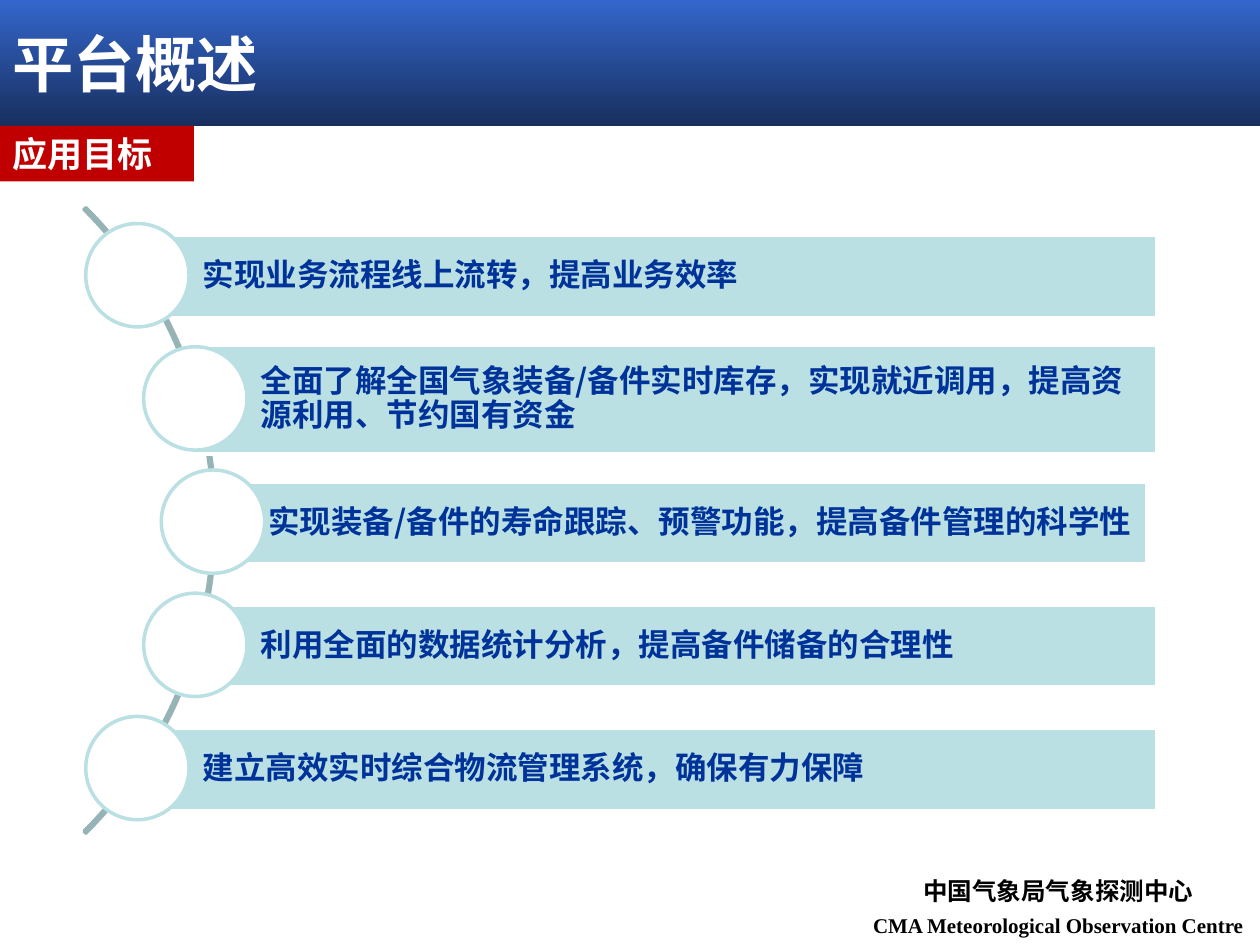
import math
from dataclasses import dataclass

import pptx
import pptx.dml.color
import pptx.enum.shapes
import pptx.enum.text
import pptx.oxml
import pptx.oxml.ns
import pptx.util

COLUMNS = 100
ROWS = 75
CELL = pptx.util.Inches(0.1)


@dataclass(frozen=True)
class Theme:
    chinese: str = "Noto Sans CJK SC"
    label: str = "Arial"
    english: str = "Times New Roman"
    white: str = "FFFFFF"
    black: str = "000000"
    blue: str = "3366CC"
    navy: str = "182F5E"
    red: str = "C00000"
    pale: str = "BBE0E3"
    arc: str = "96B3B6"
    goal: str = "003399"
    title_size: float = 35
    label_size: float = 20
    goal_size: float = 18
    footer_size: float = 14
    footer_english_size: float = 12
    line_width: float = 2


@dataclass(frozen=True)
class Box:
    column: float
    row: float
    columns: float
    rows: float

    def lengths(self) -> tuple[int, ...]:
        return tuple(round(value * CELL) for value in (self.column, self.row, self.columns, self.rows))


@dataclass(frozen=True)
class Goal:
    text: str
    rows: float = 6.5
    shift: float = 0


THEME = Theme()
GOALS = (
    Goal("实现业务流程线上流转，提高业务效率"),
    Goal("全面了解全国气象装备/备件实时库存，实现就近调用，提高资源利用、节约国有资金", rows=8.6),
    Goal("实现装备/备件的寿命跟踪、预警功能，提高备件管理的科学性", shift=-0.8),
    Goal("利用全面的数据统计分析，提高备件储备的合理性"),
    Goal("建立高效实时综合物流管理系统，确保有力保障"),
)
ARC_CENTRE_COLUMN = -18
ARC_CENTRE_ROW = 41.3
ARC_RADIUS = 35.1
ORBIT_RADIUS = 34.9
GOAL_PITCH = 9.78
CIRCLE = 8.2
BAR_RIGHT = 91.8


def colour(value: str) -> pptx.dml.color.RGBColor:
    return pptx.dml.color.RGBColor.from_string(value)


def add_run(paragraph, text: str, size: float, face: str, ink: str) -> None:
    run = paragraph.add_run()
    run.text = text
    run.font.size = pptx.util.Pt(size)
    run.font.bold = True
    run.font.color.rgb = colour(ink)
    run.font.name = face
    east_asian = pptx.oxml.parse_xml(f'<a:ea {pptx.oxml.ns.nsdecls("a")} typeface="{face}"/>')
    run.font._element.append(east_asian)


def add_figure(slide, kind, box: Box, fill: str | None = None, line: str | None = None):
    shape = slide.shapes.add_shape(kind, *box.lengths())
    shape.shadow.inherit = False
    if fill:
        shape.fill.solid()
        shape.fill.fore_color.rgb = colour(fill)
    else:
        shape.fill.background()
    if line:
        shape.line.color.rgb = colour(line)
        shape.line.width = pptx.util.Pt(THEME.line_width)
    else:
        shape.line.fill.background()
    return shape


def write_left(shape, text: str, size: float, face: str, ink: str):
    frame = shape.text_frame
    frame.word_wrap = True
    frame.vertical_anchor = pptx.enum.text.MSO_ANCHOR.MIDDLE
    paragraph = frame.paragraphs[0]
    paragraph.alignment = pptx.enum.text.PP_ALIGN.LEFT
    add_run(paragraph, text, size, face, ink)
    return paragraph


def format_title(slide) -> None:
    title = slide.shapes.title
    title.left, title.top, title.width, title.height = Box(0, 0, COLUMNS, 10).lengths()
    title.fill.gradient()
    title.fill.gradient_angle = 270
    for stop, value in zip(title.fill.gradient_stops, (THEME.blue, THEME.navy)):
        stop.color.rgb = colour(value)
        stop.position = 0 if value == THEME.blue else 1
    write_left(title, "平台概述", THEME.title_size, THEME.chinese, THEME.white)


def add_label(slide) -> None:
    label = add_figure(slide, pptx.enum.shapes.MSO_SHAPE.RECTANGLE, Box(0, 10, 15.4, 4.4), THEME.red)
    write_left(label, "应用目标", THEME.label_size, THEME.label, THEME.white)


def add_arc(slide) -> None:
    box = Box(ARC_CENTRE_COLUMN - ARC_RADIUS, ARC_CENTRE_ROW - ARC_RADIUS, 2 * ARC_RADIUS, 2 * ARC_RADIUS)
    arc = add_figure(slide, pptx.enum.shapes.MSO_SHAPE.BLOCK_ARC, box, line=THEME.arc)
    for index, value in enumerate((189, 27, 0.003)):
        arc.adjustments[index] = value


def add_goal(slide, goal: Goal, position: int) -> None:
    offset = (position - (len(GOALS) - 1) / 2) * GOAL_PITCH
    column = ARC_CENTRE_COLUMN + math.sqrt(ORBIT_RADIUS ** 2 - offset ** 2)
    row = ARC_CENTRE_ROW + offset
    left = column + goal.shift
    bar_box = Box(left, row + 0.2 - goal.rows / 2, BAR_RIGHT + goal.shift - left, goal.rows)
    bar = add_figure(slide, pptx.enum.shapes.MSO_SHAPE.RECTANGLE, bar_box, THEME.pale, THEME.white)
    frame = bar.text_frame
    frame.margin_left = round(5.2 * CELL)
    frame.margin_right = frame.margin_top = frame.margin_bottom = round(0.5 * CELL)
    paragraph = write_left(bar, goal.text, THEME.goal_size, THEME.chinese, THEME.goal)
    paragraph.line_spacing = 0.9
    circle_box = Box(column - CIRCLE / 2, row + 0.1 - CIRCLE / 2, CIRCLE, CIRCLE)
    add_figure(slide, pptx.enum.shapes.MSO_SHAPE.OVAL, circle_box, THEME.white, THEME.pale)


def add_footer(slide) -> None:
    footer = slide.shapes.add_textbox(*Box(68, 68.9, 32, 5.8).lengths())
    frame = footer.text_frame
    frame.word_wrap = True
    lines = (
        ("中国气象局气象探测中心", THEME.footer_size, THEME.chinese),
        ("CMA Meteorological Observation Centre", THEME.footer_english_size, THEME.english),
    )
    for index, (text, size, face) in enumerate(lines):
        paragraph = frame.add_paragraph() if index else frame.paragraphs[0]
        paragraph.alignment = pptx.enum.text.PP_ALIGN.CENTER
        paragraph.line_spacing = pptx.util.Pt(18)
        add_run(paragraph, text, size, face, THEME.black)


def main() -> None:
    presentation = pptx.Presentation()
    presentation.slide_width = COLUMNS * CELL
    presentation.slide_height = ROWS * CELL
    slide = presentation.slides.add_slide(presentation.slide_layouts[5])
    format_title(slide)
    add_footer(slide)
    add_label(slide)
    add_arc(slide)
    for position, goal in enumerate(GOALS):
        add_goal(slide, goal, position)
    presentation.save("out.pptx")


if __name__ == "__main__":
    main()
